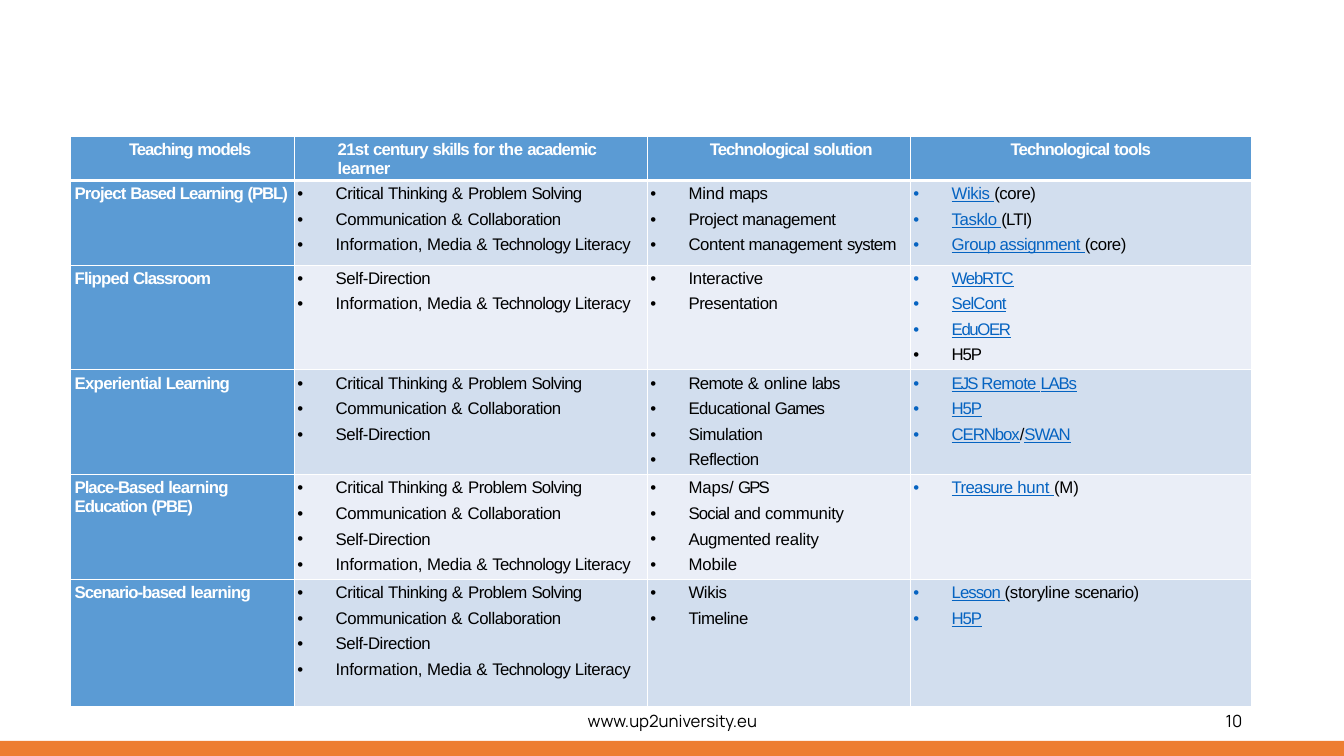
from dataclasses import dataclass
from itertools import groupby

from lxml import etree
from pptx import Presentation
from pptx import util as u
from pptx.dml.color import RGBColor
from pptx.enum import shapes, text
from pptx.oxml import ns

HEX = {
    "white": "FFFFFF", "black": "000000", "bar": "ED7D31", "head": "5B9BD4",
    "odd": "D2DEEE", "even": "EAEEF7", "link": "0563C1",
}

# Letter spacing in points, by word; other words take the default
BOLD_GAP = -0.7
BOLD = {
    "Teaching": -0.8, "21st": -0.5, "century": -0.6, "for": -0.3, "the": -0.3,
    "learner": -0.4, "solution": -0.6, "tools": -0.6, "Project": -0.6,
    "Based": -0.8, "(PBL)": -0.8, "Flipped": -0.6, "Classroom": -0.8,
    "Experiential": -0.5, "learning": -0.5, "(PBE)": -0.8,
}
PLAIN_GAP = -0.3
PLAIN = {
    "Thinking": -0.4, "&": 0.1, "Problem": -0.4, "Solving": -0.5,
    "Information,": -0.1, "Media": -0.2, "Technology": -0.5, "Mind": -0.1,
    "maps": -0.5, "system": -0.5, "Interactive": -0.2, "(LTI)": -0.6,
    "Group": -0.4, "assignment": -0.4, "WebRTC": -0.9, "SelCont": -0.6,
    "EduOER": -1, "H5P": -0.8, "Remote": -0.5, "online": -0.2, "labs": -0.5,
    "Educational": -0.4, "Games": -0.7, "EJS": -1.4, "LABs": -0.9,
    "CERNbox": -0.8, "/": -0.8, "SWAN": -0.8, "Maps/": -0.1, "GPS": -1.4,
    "Social": -0.6, "and": -0.4, "community": -0.2, "reality": -0.1,
    "Mobile": -0.1, "Treasure": -0.5, "hunt": -0.1, "(M)": -0.1,
    "Lesson": -0.7, "(storyline": -0.2, "scenario)": -0.4,
}

THINK = "Critical Thinking & Problem Solving"
TALK = "Communication & Collaboration"
SELF = "Self-Direction"
INFO = "Information, Media & Technology Literacy"


@dataclass
class Head:
    name: str
    width: float
    indent: float = 0
    align: text.PP_ALIGN = text.PP_ALIGN.LEFT


@dataclass
class Model:
    name: str
    height: float
    skills: list[str]
    ways: list[str]
    tools: list[str]  # square brackets mark a link


@dataclass
class Note:
    words: str
    left: float
    width: float
    align: text.PP_ALIGN


HEADS = [
    Head("Teaching models", 2.22, 0.58),
    Head("21st century skills for the academic learner", 3.5, 0.43),
    Head("Technological solution", 2.61, 0.62),
    Head("Technological tools", 3.38, align=text.PP_ALIGN.CENTER),
]
MODELS = [
    Model("Project Based Learning (PBL)", 0.84, [THINK, TALK, INFO],
          ["Mind maps", "Project management", "Content management system"],
          ["[Wikis ](core)", "[Tasklo ](LTI)", "[Group assignment ](core)"]),
    Model("Flipped Classroom", 1.02, [SELF, INFO],
          ["Interactive", "Presentation"],
          ["[WebRTC]", "[SelCont]", "[EduOER]", "H5P"]),
    Model("Experiential Learning", 1.02, [THINK, TALK, SELF],
          ["Remote & online labs", "Educational Games", "Simulation", "Reflection"],
          ["[EJS Remote LABs]", "[H5P]", "[CERNbox]/[SWAN]"]),
    Model("Place-Based learning Education (PBE)", 1.02, [THINK, TALK, SELF, INFO],
          ["Maps/ GPS", "Social and community", "Augmented reality", "Mobile"],
          ["[Treasure hunt ](M)"]),
    Model("Scenario-based learning", 1.26, [THINK, TALK, SELF, INFO],
          ["Wikis", "Timeline"],
          ["[Lesson ](storyline scenario)", "[H5P]"]),
]
NOTES = [
    Note("www.up2university.eu", 4.42, 4.5, text.PP_ALIGN.CENTER),
    Note("10", 9.42, 3, text.PP_ALIGN.RIGHT),
]
HEAD_HIGH = 0.43


def color(key: str) -> RGBColor:
    return RGBColor.from_string(HEX[key])


def add_run(par, words: str, hue: str, **form):
    run = par.add_run()
    run.text = words
    for key, value in {"size": u.Pt(12), **form}.items():
        setattr(run.font, key, value)
    run.font.color.rgb = color(hue)
    return run


def write(par, line: str, bold: bool) -> None:
    """Write a line in runs of equal letter spacing."""
    gaps, rest = (BOLD, BOLD_GAP) if bold else (PLAIN, PLAIN_GAP)
    for spot, part in enumerate(line.replace("]", "[").split("[")):
        link = spot % 2 == 1
        hue = "white" if bold else "link" if link else "black"
        *front, last = part.split(" ")
        words = [word + " " for word in front] + ([last] if last else [])
        for gap, group in groupby(words, lambda w: gaps.get(w.strip(), rest)):
            run = add_run(par, "".join(group), hue, name="Arial", bold=bold,
                          underline=link)
            run.font._element.set("spc", str(round(gap * 100)))


def indent(par, left: float, hang: float = 0) -> None:
    form = par._p.get_or_add_pPr()
    form.set("marL", str(u.Inches(left)))
    form.set("indent", str(u.Inches(hang)))


def add_dot(par) -> None:
    form = par._p.get_or_add_pPr()
    etree.SubElement(form, ns.qn("a:buFont")).set("typeface", "Arial")
    etree.SubElement(form, ns.qn("a:buChar")).set("char", "•")


def style(cell, fill: str, top: float = 1, base: float = 1) -> None:
    """Set margins, white borders and fill of a cell."""
    for side, size in {"left": 0, "top": 0.04, "right": 0, "bottom": 0}.items():
        setattr(cell, f"margin_{side}", u.Inches(size))
    form = cell._tc.get_or_add_tcPr()
    for side, size in {"L": 1, "R": 1, "T": top, "B": base}.items():
        edge = etree.SubElement(form, ns.qn(f"a:ln{side}"), w=str(u.Pt(size)))
        paint = etree.SubElement(edge, ns.qn("a:solidFill"))
        etree.SubElement(paint, ns.qn("a:srgbClr"), val=HEX["white"])
    cell.fill.solid()
    cell.fill.fore_color.rgb = color(fill)


def fill_list(cell, lines: list[str]) -> None:
    for spot, line in enumerate(lines):
        par = cell.text_frame.add_paragraph() if spot else cell.text_frame.paragraphs[0]
        indent(par, 0.41, -0.38)
        if spot:
            par.space_before = u.Pt(4.8)
        add_dot(par)
        write(par, line, False)


def add_grid(slide) -> None:
    highs = [HEAD_HIGH] + [model.height for model in MODELS]
    wide = sum(head.width for head in HEADS)
    grid = slide.shapes.add_table(
        len(highs), len(HEADS), u.Inches(0.7), u.Inches(1.35),
        u.Inches(wide), u.Inches(sum(highs))).table
    grid.horz_banding = False
    for row, high in zip(grid.rows, highs):
        row.height = u.Inches(high)

    # Header row
    for col, head in enumerate(HEADS):
        grid.columns[col].width = u.Inches(head.width)
        cell = grid.cell(0, col)
        style(cell, "head", base=3)
        par = cell.text_frame.paragraphs[0]
        par.alignment = head.align
        indent(par, head.indent)
        write(par, head.name, True)

    # One row for each teaching model
    for row, model in enumerate(MODELS, 1):
        top = 3 if row == 1 else 1
        cell = grid.cell(row, 0)
        style(cell, "head", top)
        par = cell.text_frame.paragraphs[0]
        indent(par, 0.04)
        write(par, model.name, True)
        for col, lines in enumerate((model.skills, model.ways, model.tools), 1):
            style(grid.cell(row, col), "odd" if row % 2 else "even", top)
            fill_list(grid.cell(row, col), lines)


def add_note(slide, note: Note) -> None:
    frame = slide.shapes.add_textbox(
        u.Inches(note.left), u.Inches(6.95), u.Inches(note.width), u.Inches(0.4)).text_frame
    frame.word_wrap = True
    frame.vertical_anchor = text.MSO_ANCHOR.MIDDLE
    frame.paragraphs[0].alignment = note.align
    add_run(frame.paragraphs[0], note.words, "black", name="Manrope")


def main() -> None:
    deck = Presentation()
    deck.slide_width, deck.slide_height = u.Inches(13.33), u.Inches(7.5)
    slide = deck.slides.add_slide(deck.slide_layouts[6])

    # Bottom bar
    bar = slide.shapes.add_shape(shapes.MSO_SHAPE.RECTANGLE, 0, u.Inches(7.35),
                                 deck.slide_width, u.Inches(0.15))
    bar.shadow.inherit = False
    bar.fill.solid()
    bar.fill.fore_color.rgb = color("bar")
    bar.line.fill.background()

    # Footer and table
    for note in NOTES:
        add_note(slide, note)
    add_grid(slide)
    deck.save("out.pptx")


if __name__ == "__main__":
    main()
